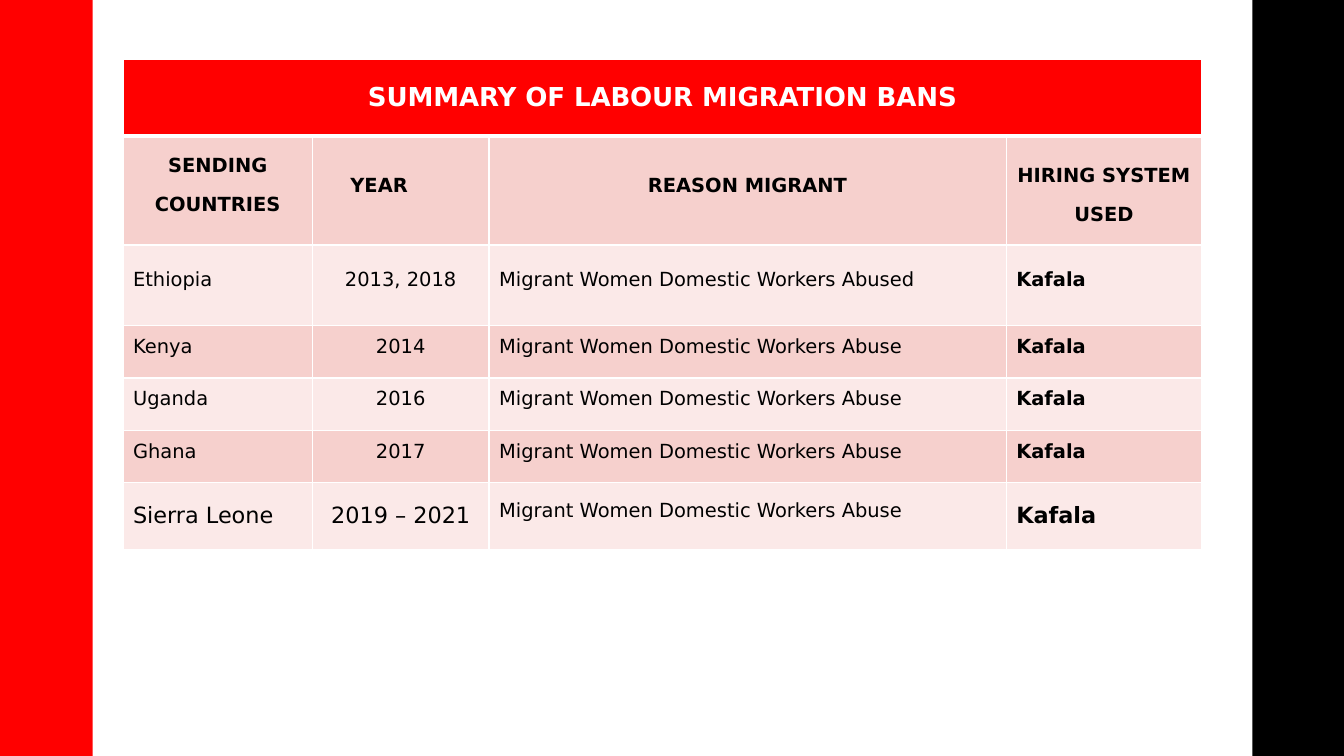
from dataclasses import dataclass

from lxml import etree
from pptx import Presentation
from pptx import util as u
from pptx.dml.color import RGBColor
from pptx.enum import shapes, text
from pptx.oxml.ns import qn


@dataclass(frozen=True)
class Theme:
    red: str = "FF0000"
    black: str = "000000"
    white: str = "FFFFFF"
    band_dark: str = "F6D0CD"
    band_light: str = "FBE9E8"
    font: str = "DejaVu Sans"
    title_size: int = 32
    raised_size: int = 24
    plain_size: int = 16


@dataclass(frozen=True)
class Bar:
    left: float
    color: str


@dataclass(frozen=True)
class Entry:
    words: str
    fill: str
    color: str = "000000"
    size: int = 24
    bold: bool = False
    centered: bool = False
    anchor: text.MSO_ANCHOR = text.MSO_ANCHOR.MIDDLE
    raised: bool = True
    bottom_line: float = 1


THEME = Theme()
PAGE_WIDTH, PAGE_HEIGHT, BAR_WIDTH = 13.33, 7.5, 0.92
BARS = [Bar(0, THEME.red), Bar(12.42, THEME.black)]
COLUMN_WIDTHS = [1.88, 1.75, 5.13, 1.94]
ROW_HEIGHTS = [0.76, 1.08, 0.8, 0.52, 0.52, 0.52, 0.66]
TITLE = "SUMMARY OF LABOUR MIGRATION BANS"
HEADINGS = ["SENDING COUNTRIES", "YEAR\t", "REASON MIGRANT", "HIRING SYSTEM USED"]
REASON = "Migrant Women Domestic Workers Abuse"
SYSTEM = "Kafala"
BANS = [
    ("Ethiopia", "2013, 2018", REASON + "d", SYSTEM),
    ("Kenya", "2014", REASON, SYSTEM),
    ("Uganda", "2016", REASON, SYSTEM),
    ("Ghana", "2017", REASON, SYSTEM),
    ("Sierra Leone", "2019 – 2021", REASON, SYSTEM),
]


def draw_bar(page, bar: Bar) -> None:
    shape = page.shapes.add_shape(
        shapes.MSO_SHAPE.RECTANGLE,
        u.Inches(bar.left), 0, u.Inches(BAR_WIDTH), u.Inches(PAGE_HEIGHT))
    shape.shadow.inherit = False
    shape.fill.solid()
    shape.fill.fore_color.rgb = RGBColor.from_string(bar.color)
    shape.line.fill.background()


def draw_borders(cell, bottom_line: float) -> None:
    properties = cell._tc.get_or_add_tcPr()
    widths = {"a:lnL": 1, "a:lnR": 1, "a:lnT": 1, "a:lnB": bottom_line}
    for tag, width in widths.items():
        line = etree.SubElement(properties, qn(tag), w=str(u.Pt(width)))
        fill = etree.SubElement(line, qn("a:solidFill"))
        etree.SubElement(fill, qn("a:srgbClr"), val=THEME.white)


def fill_cell(cell, entry: Entry) -> None:
    draw_borders(cell, entry.bottom_line)
    cell.fill.solid()
    cell.fill.fore_color.rgb = RGBColor.from_string(entry.fill)
    cell.vertical_anchor = entry.anchor
    para = cell.text_frame.paragraphs[0]
    para.alignment = text.PP_ALIGN.CENTER if entry.centered else text.PP_ALIGN.LEFT
    span = para.add_run()
    span.text = entry.words
    font_format = {"name": THEME.font, "size": u.Pt(entry.size), "bold": entry.bold}
    for name, value in font_format.items():
        setattr(span.font, name, value)
    span.font.color.rgb = RGBColor.from_string(entry.color)
    if entry.raised:
        span.font._element.set("baseline", "30000")


def heading_entry(column: int, words: str) -> Entry:
    last = column == len(HEADINGS) - 1
    anchor = text.MSO_ANCHOR.BOTTOM if last else text.MSO_ANCHOR.MIDDLE
    return Entry(words, THEME.band_dark, THEME.black, THEME.raised_size,
                 bold=True, centered=True, anchor=anchor)


def ban_entry(row: int, column: int, words: str) -> Entry:
    # The last country is set in plain type, except for its reason
    raised = row < len(BANS) - 1 or column == 2
    return Entry(words, THEME.band_dark if row % 2 else THEME.band_light, THEME.black,
                 THEME.raised_size if raised else THEME.plain_size,
                 bold=column == 3, centered=column == 1, raised=raised)


def draw_table(page) -> None:
    frame = page.shapes.add_table(
        len(ROW_HEIGHTS), len(COLUMN_WIDTHS), u.Inches(1.22), u.Inches(0.59),
        u.Inches(sum(COLUMN_WIDTHS)), u.Inches(sum(ROW_HEIGHTS)))
    table = frame.table
    for column, width in zip(table.columns, COLUMN_WIDTHS):
        column.width = u.Inches(width)
    for row, height in zip(table.rows, ROW_HEIGHTS):
        row.height = u.Inches(height)

    # Title row across all columns
    title_cell = table.cell(0, 0)
    title_cell.merge(table.cell(0, len(COLUMN_WIDTHS) - 1))
    fill_cell(title_cell, Entry(
        TITLE, THEME.red, THEME.white, THEME.title_size, bold=True, centered=True,
        anchor=text.MSO_ANCHOR.BOTTOM, bottom_line=3))

    # Column headings, then one row per country
    for column, words in enumerate(HEADINGS):
        fill_cell(table.cell(1, column), heading_entry(column, words))
    for row, ban in enumerate(BANS):
        for column, words in enumerate(ban):
            fill_cell(table.cell(row + 2, column), ban_entry(row, column, words))


def main() -> None:
    deck = Presentation()
    deck.slide_width = u.Inches(PAGE_WIDTH)
    deck.slide_height = u.Inches(PAGE_HEIGHT)
    page = deck.slides.add_slide(deck.slide_layouts[6])
    for bar in BARS:
        draw_bar(page, bar)
    draw_table(page)
    deck.save("out.pptx")


if __name__ == "__main__":
    main()
